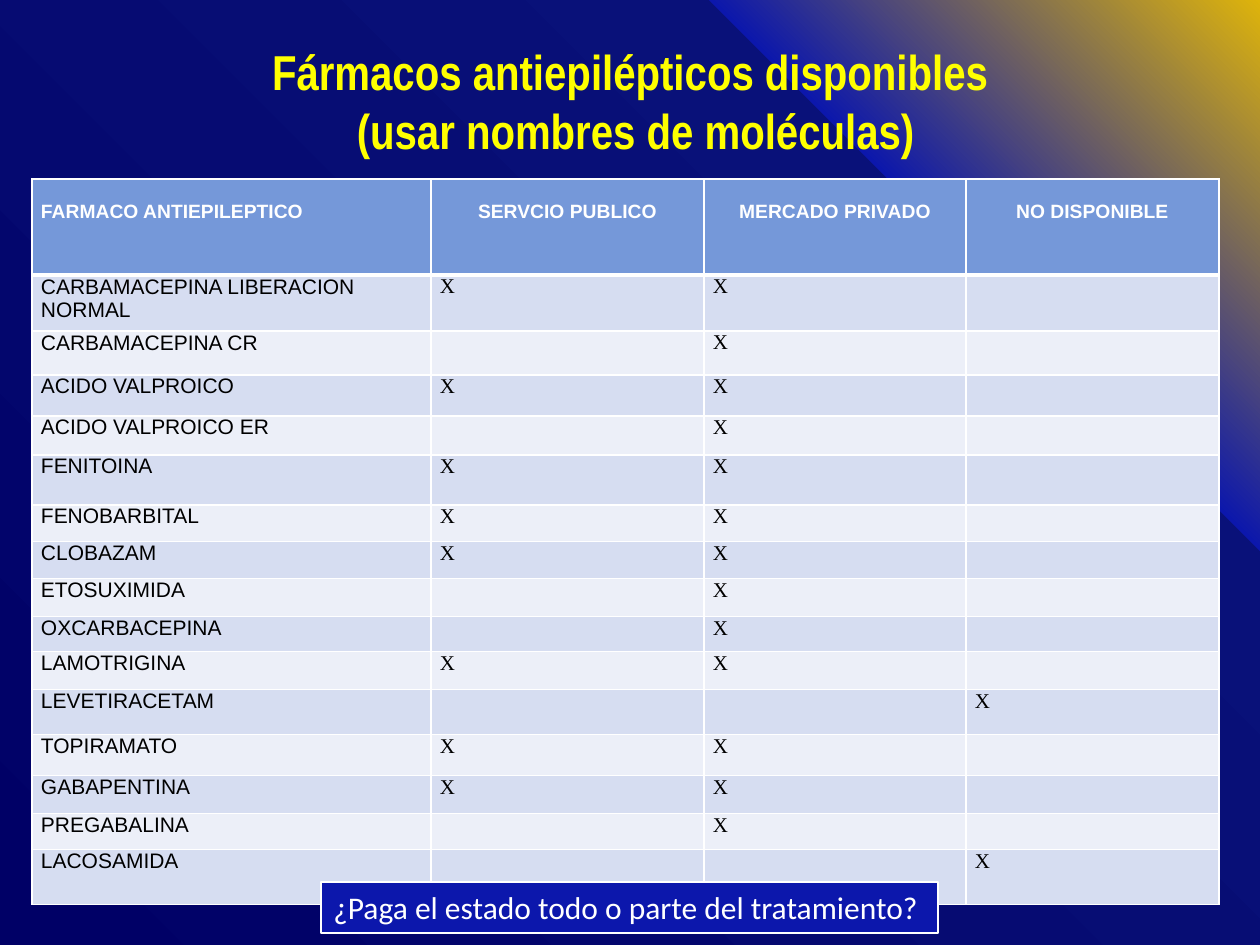
import pptx
import pptx.util
import pptx.dml.color
import pptx.enum.text
import pptx.enum.shapes
import pptx.oxml.ns
from lxml import etree

PX = 914400 / 126
qn = pptx.oxml.ns.qn
Align = pptx.enum.text.PP_ALIGN
Anchor = pptx.enum.text.MSO_ANCHOR


def rgb(code):
    return pptx.dml.color.RGBColor.from_string(code)


def write(frame, text, size=12, font="Arial", color="000000", bold=False,
          align=Align.LEFT):
    para = frame.paragraphs[0]
    para.text = text
    para.alignment = align
    for run in para.runs:
        run.font.size = pptx.util.Pt(size)
        run.font.name = font
        run.font.bold = bold
        run.font.color.rgb = rgb(color)
    if not text:  # keeps an empty cell from growing its row
        etree.SubElement(para._p, qn("a:endParaRPr"), sz=str(size * 100))


deck = pptx.Presentation()
deck.slide_width = round(1260 * PX)
deck.slide_height = round(945 * PX)
slide = deck.slides.add_slide(deck.slide_layouts[6])

# Background: diagonal gradient with a hard edge at three quarters
fill = slide.background.fill
fill.gradient()
fill.gradient_angle = 45
stops = next(slide._element.iter(qn("a:gsLst")))
for stop in list(stops):
    stops.remove(stop)
for pos, code in [(0, "000066"), (75, "091179"), (75, "0C17AC"), (100, "DEB40B")]:
    stop = etree.SubElement(stops, qn("a:gs"), pos=str(pos * 1000))
    etree.SubElement(stop, qn("a:srgbClr"), val=code)

# Title
box = slide.shapes.add_textbox(*[round(v * PX) for v in (63, 22, 1134, 157)])
frame = box.text_frame
frame.word_wrap = True
frame.vertical_anchor = Anchor.MIDDLE
write(frame, "Fármacos antiepilépticos disponibles\n (usar nombres de moléculas)",
      size=28, font="Arial Narrow", color="FFFF00", bold=True, align=Align.CENTER)

# Table content: drug, then its marks for public, private, not available
heads = ["FARMACO ANTIEPILEPTICO", "SERVCIO PUBLICO", "MERCADO PRIVADO",
         "NO DISPONIBLE"]
both, private, none = ["X", "X", ""], ["", "X", ""], ["", "", "X"]
drugs = [
    ("CARBAMACEPINA LIBERACION NORMAL", both),
    ("CARBAMACEPINA CR", private),
    ("ACIDO VALPROICO", both),
    ("ACIDO VALPROICO ER", private),
    ("FENITOINA", both),
    ("FENOBARBITAL", both),
    ("CLOBAZAM", both),
    ("ETOSUXIMIDA", private),
    ("OXCARBACEPINA", private),
    ("LAMOTRIGINA", both),
    ("LEVETIRACETAM", none),
    ("TOPIRAMATO", both),
    ("GABAPENTINA", both),
    ("PREGABALINA", private),
    ("LACOSAMIDA", none),
]
rows = [heads] + [[name] + marks for name, marks in drugs]
wides = [399, 273, 262, 253]
highs = [96, 56, 44, 41, 39, 50, 37, 37, 38, 35, 38, 45, 41, 38, 36, 55]

# Table
area = [round(v * PX) for v in (32, 179, sum(wides), sum(highs))]
table = slide.shapes.add_table(len(rows), len(heads), *area).table
table.first_row = table.horz_banding = False
for col, wide in zip(table.columns, wides):
    col.width = round(wide * PX)
for i, (row, high) in enumerate(zip(rows, highs)):
    table.rows[i].height = round(high * PX)
    for j, text in enumerate(row):
        cell = table.cell(i, j)
        cell.margin_left = cell.margin_right = round(9 * PX)
        cell.margin_top = round(22 * PX) if i == 0 else 0
        cell.margin_bottom = 0
        if i == 0:
            shade = "7598D9"
            write(cell.text_frame, text, size=11, color="FFFFFF", bold=True,
                  align=Align.CENTER if j else Align.LEFT)
        else:
            shade = "D6DDF1" if i % 2 else "ECEFF8"
            write(cell.text_frame, text, font="Times New Roman" if j else "Arial")
        cell.fill.solid()
        cell.fill.fore_color.rgb = rgb(shade)

        # White borders, thick under the heading row
        props = cell._tc.get_or_add_tcPr()
        for k, side in enumerate("LRTB"):
            thick = (i, side) in [(0, "B"), (1, "T")]
            line = etree.Element(qn("a:ln" + side), w=str(38100 if thick else 12700))
            paint = etree.SubElement(line, qn("a:solidFill"))
            etree.SubElement(paint, qn("a:srgbClr"), val="FFFFFF")
            props.insert(k, line)

# Question at the foot
note = slide.shapes.add_shape(pptx.enum.shapes.MSO_SHAPE.RECTANGLE,
                              *[round(v * PX) for v in (321, 882, 617, 51)])
note.shadow.inherit = False
note.fill.solid()
note.fill.fore_color.rgb = rgb("0C17AC")
note.line.color.rgb = rgb("FFFFFF")
note.line.width = pptx.util.Pt(0.75)
note.text_frame.word_wrap = False
note.text_frame.vertical_anchor = Anchor.TOP
write(note.text_frame, "¿Paga el estado todo o parte del tratamiento?",
      size=18, font="Calibri", color="FFFFFF")

deck.save("out.pptx")
